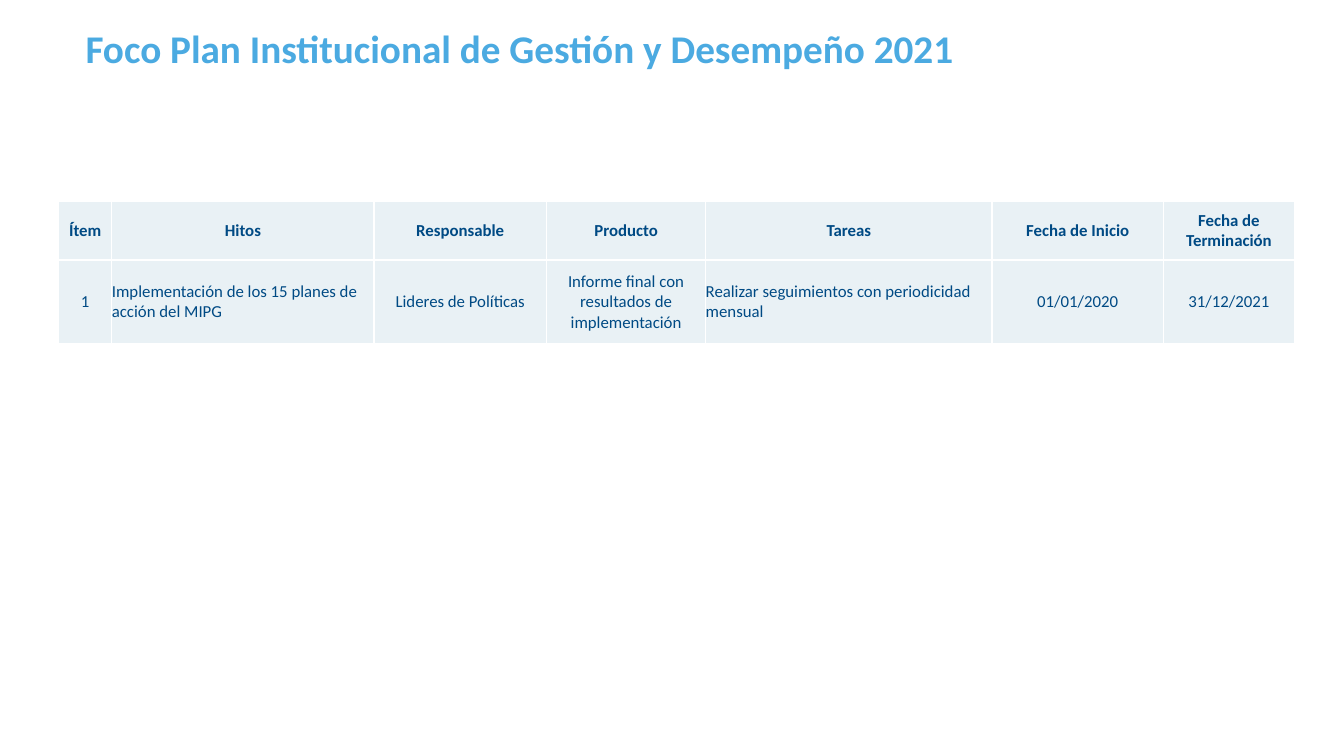
from pptx import Presentation
from pptx.dml.color import RGBColor
from pptx.enum.text import MSO_ANCHOR, MSO_AUTO_SIZE, PP_ALIGN
from pptx.oxml import parse_xml
from pptx.oxml.ns import nsdecls
from pptx.util import Emu, Pt

EMU_PER_PX = 9144
FONT = "Calibri"
TITLE_BLUE = "4BAAE1"
TEXT_BLUE = "004A84"
CELL_FILL = "E9F1F5"
BORDER = "FFFFFF"

TITLE = "Foco Plan Institucional de Gestión y Desempeño 2021"
COLUMN_WIDTHS = [53, 260, 171, 158, 284, 170, 130]
ROW_HEIGHTS = [58, 83]
LEFT_ALIGNED_COLUMNS = {1, 4}
PLAN_ROWS = [
    ["Ítem", "Hitos", "Responsable", "Producto", "Tareas",
     "Fecha de Inicio", "Fecha de Terminación"],
    ["1", "Implementación de los 15 planes de acción del MIPG",
     "Lideres de Políticas", "Informe final con resultados de implementación",
     "Realizar seguimientos con periodicidad mensual", "01/01/2020", "31/12/2021"],
]


def px(length):
    return Emu(length * EMU_PER_PX)


def color(hex_string):
    return RGBColor.from_string(hex_string)


def style_paragraph(paragraph, size, hex_string, bold, alignment):
    paragraph.alignment = alignment
    font = paragraph.font
    font.name = FONT
    font.size = Pt(size)
    font.bold = bold
    font.color.rgb = color(hex_string)


def set_borders(cell):
    properties = cell._tc.get_or_add_tcPr()
    for position, side in enumerate(["lnL", "lnR", "lnT", "lnB"]):
        properties.insert(position, parse_xml(
            f'<a:{side} {nsdecls("a")} w="{Pt(1)}"><a:solidFill>'
            f'<a:srgbClr val="{BORDER}"/></a:solidFill></a:{side}>'))


def add_title(slide, left, top, width, height):
    shape = slide.shapes.add_textbox(px(left), px(top), px(width), px(height))
    text_frame = shape.text_frame
    text_frame.word_wrap = True
    text_frame.auto_size = MSO_AUTO_SIZE.SHAPE_TO_FIT_TEXT
    text_frame.text = TITLE
    style_paragraph(text_frame.paragraphs[0], 28, TITLE_BLUE, True, PP_ALIGN.LEFT)


def fill_cell(cell, text, bold, alignment):
    cell.text = text
    cell.vertical_anchor = MSO_ANCHOR.MIDDLE
    cell.margin_left = cell.margin_right = cell.margin_top = cell.margin_bottom = 0
    cell.fill.solid()
    cell.fill.fore_color.rgb = color(CELL_FILL)
    set_borders(cell)
    style_paragraph(cell.text_frame.paragraphs[0], 12, TEXT_BLUE, bold, alignment)


def add_plan_table(slide, left, top):
    table = slide.shapes.add_table(
        len(PLAN_ROWS), len(COLUMN_WIDTHS), px(left), px(top),
        px(sum(COLUMN_WIDTHS)), px(sum(ROW_HEIGHTS))).table
    table.horz_banding = False
    for column, width in zip(table.columns, COLUMN_WIDTHS):
        column.width = px(width)
    for row_index, texts in enumerate(PLAN_ROWS):
        table.rows[row_index].height = px(ROW_HEIGHTS[row_index])
        is_header = row_index == 0
        for column_index, text in enumerate(texts):
            is_left = not is_header and column_index in LEFT_ALIGNED_COLUMNS
            fill_cell(table.cell(row_index, column_index), text, is_header,
                      PP_ALIGN.LEFT if is_left else PP_ALIGN.CENTER)


def main():
    presentation = Presentation()
    presentation.slide_width = px(1333)
    presentation.slide_height = px(750)
    slide = presentation.slides.add_slide(presentation.slide_layouts[6])
    add_title(slide, 75, 19, 1059, 57)
    add_plan_table(slide, 58, 200)
    presentation.save("out.pptx")


if __name__ == "__main__":
    main()
